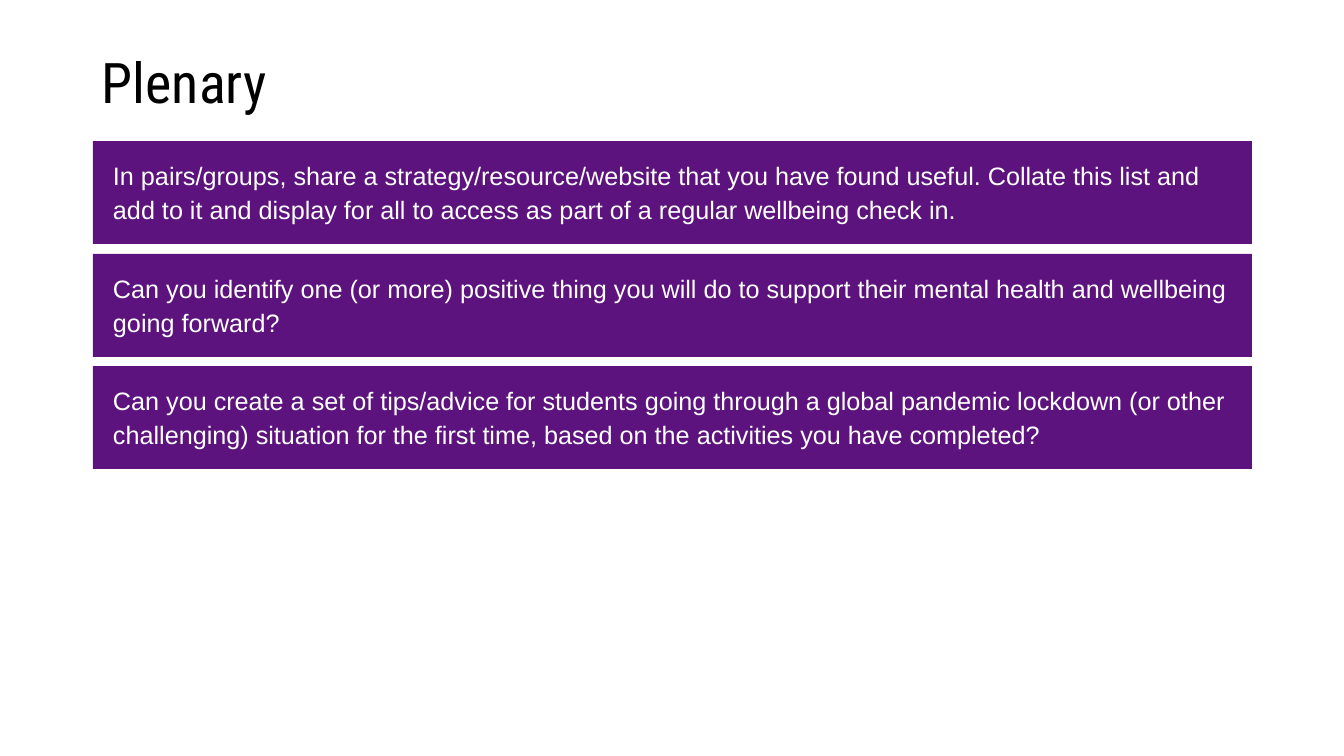
from dataclasses import dataclass

from pptx import Presentation
from pptx.dml.color import RGBColor
from pptx.enum.shapes import MSO_SHAPE
from pptx.enum.text import MSO_ANCHOR, PP_ALIGN
from pptx.slide import Slide
from pptx.text.text import TextFrame
from pptx.util import Emu, Length, Pt

PIXELS_PER_INCH = 100.8
FIRST_TOP, LAST_TOP = 141, 366
PURPLE, WHITE, BLACK = "5D137D", "FFFFFF", "000000"
TASKS = (
    "In pairs/groups, share a strategy/resource/website that you have found useful. "
    "Collate this list and add to it and display for all to access as part of a regular "
    "wellbeing check in.",
    "Can you identify one (or more) positive thing you will do to support their mental "
    "health and wellbeing going forward?",
    "Can you create a set of tips/advice for students going through a global pandemic "
    "lockdown (or other challenging) situation for the first time, based on the "
    "activities you have completed?",
)


@dataclass(frozen=True)
class Box:
    """Place of a text block, in px."""

    left: int
    top: int
    width: int
    height: int

    def bounds(self) -> tuple[Length, ...]:
        """Return left, top, width and height in EMU."""
        return tuple(px(n) for n in (self.left, self.top, self.width, self.height))


@dataclass(frozen=True)
class TextStyle:
    """Typography and insets (left, top, right, bottom, in px) of a text block."""

    font: str
    size: int
    color: str
    line_spacing: float | Length
    anchor: MSO_ANCHOR
    insets: tuple[int, int, int, int]


TITLE_STYLE = TextStyle("Roboto Condensed", 40, BLACK, 0.9, MSO_ANCHOR.MIDDLE, (10, 5, 10, 5))
TASK_STYLE = TextStyle("Arial", 18, WHITE, Pt(24), MSO_ANCHOR.TOP, (20, 16, 20, 5))


def px(pixels: int) -> Length:
    """Convert px to EMU."""
    return Emu(round(pixels * 914400 / PIXELS_PER_INCH))


def rgb(color: str) -> RGBColor:
    """Convert a hex string to a colour."""
    return RGBColor.from_string(color)


def write_text(frame: TextFrame, text: str, style: TextStyle) -> None:
    """Fill a text frame with one styled paragraph."""
    frame.word_wrap = True
    frame.vertical_anchor = style.anchor
    left, top, right, bottom = (px(inset) for inset in style.insets)
    frame.margin_left, frame.margin_top = left, top
    frame.margin_right, frame.margin_bottom = right, bottom
    paragraph = frame.paragraphs[0]
    paragraph.text = text
    paragraph.alignment = PP_ALIGN.LEFT
    paragraph.line_spacing = style.line_spacing
    paragraph.font.name = style.font
    paragraph.font.size = Pt(style.size)
    paragraph.font.color.rgb = rgb(style.color)


def add_title(slide: Slide, text: str, box: Box) -> None:
    """Add the slide heading."""
    shape = slide.shapes.add_textbox(*box.bounds())
    write_text(shape.text_frame, text, TITLE_STYLE)


def add_task(slide: Slide, text: str, box: Box) -> None:
    """Add a purple task bar."""
    shape = slide.shapes.add_shape(MSO_SHAPE.RECTANGLE, *box.bounds())
    shape.shadow.inherit = False
    shape.fill.solid()
    shape.fill.fore_color.rgb = rgb(PURPLE)
    shape.line.fill.background()
    write_text(shape.text_frame, text, TASK_STYLE)


def main() -> None:
    """Build and save the plenary slide."""
    presentation = Presentation()
    presentation.slide_width, presentation.slide_height = px(1344), px(756)
    slide = presentation.slides.add_slide(presentation.slide_layouts[6])
    add_title(slide, "Plenary", Box(92, 39, 1159, 92))
    pitch = (LAST_TOP - FIRST_TOP) / (len(TASKS) - 1)
    for index, task in enumerate(TASKS):
        add_task(slide, task, Box(93, round(FIRST_TOP + index * pitch), 1159, 103))
    presentation.save("out.pptx")


if __name__ == "__main__":
    main()
